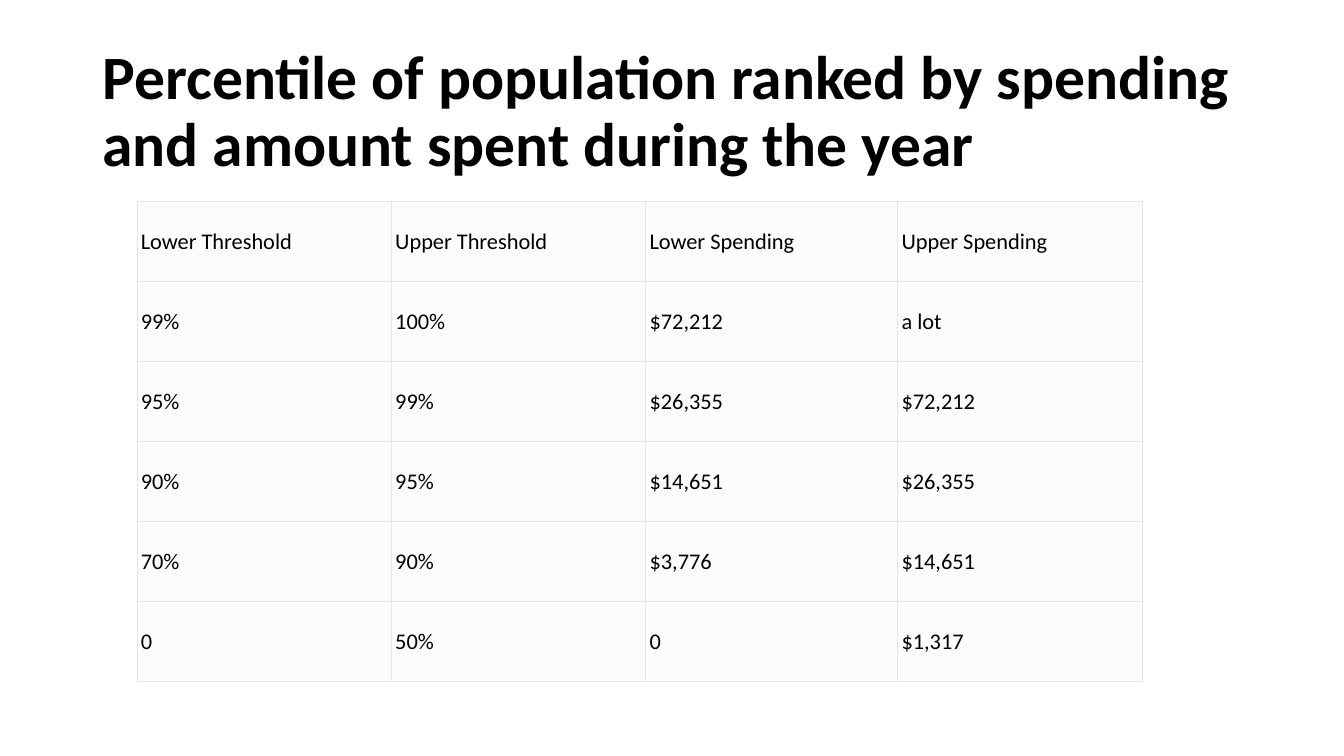
from dataclasses import dataclass

from lxml.etree import SubElement
from pptx import Presentation
from pptx.dml.color import RGBColor
from pptx.enum.text import MSO_ANCHOR, PP_ALIGN
from pptx.oxml.ns import qn
from pptx.shapes.autoshape import Shape
from pptx.slide import Slide
from pptx.table import _Cell
from pptx.text.text import _Paragraph
from pptx.util import Cm, Pt


@dataclass(frozen=True)
class Theme:
    font: str = "Calibri"
    ink: str = "000000"
    fill: str = "FCFCFC"
    line: str = "E6E6E6"
    rule: float = 0.6
    title: int = 44
    body: int = 16


@dataclass(frozen=True)
class Column:
    head: str
    width: float
    values: tuple[str, ...]


THEME = Theme()
TITLE = "Percentile of population ranked by spending and amount spent during the year"
COLUMNS = (
    Column("Lower Threshold", 6.41, ("99%", "95%", "90%", "70%", "0")),
    Column("Upper Threshold", 6.41, ("100%", "99%", "95%", "90%", "50%")),
    Column("Lower Spending", 6.35, ("$72,212", "$26,355", "$14,651", "$3,776", "0")),
    Column("Upper Spending", 6.18, ("a lot", "$72,212", "$26,355", "$14,651", "$1,317")),
)


def style(para: _Paragraph, size: int, bold: bool = False) -> None:
    para.alignment = PP_ALIGN.LEFT
    para.font.name = THEME.font
    para.font.size = Pt(size)
    para.font.bold = bold
    para.font.color.rgb = RGBColor.from_string(THEME.ink)


def draw_title(title: Shape) -> None:
    title.left, title.top = Cm(2.33), Cm(1.01)
    title.width, title.height = Cm(29.21), Cm(3.68)
    frame = title.text_frame
    frame.text = TITLE
    frame.word_wrap = True
    frame.vertical_anchor = MSO_ANCHOR.MIDDLE
    para = frame.paragraphs[0]
    para.line_spacing = 0.9
    style(para, THEME.title, bold=True)


def draw_cell(cell: _Cell, text: str) -> None:
    cell.text = text
    cell.vertical_anchor = MSO_ANCHOR.MIDDLE
    cell.margin_left = cell.margin_right = Cm(0.1)
    cell.margin_top = cell.margin_bottom = Cm(0.02)
    style(cell.text_frame.paragraphs[0], THEME.body)
    props = cell._tc.get_or_add_tcPr()
    for side in ("a:lnL", "a:lnR", "a:lnT", "a:lnB"):
        edge = SubElement(props, qn(side), w=str(Pt(THEME.rule)))
        SubElement(SubElement(edge, qn("a:solidFill")), qn("a:srgbClr"), val=THEME.line)
    cell.fill.solid()
    cell.fill.fore_color.rgb = RGBColor.from_string(THEME.fill)


def draw_table(slide: Slide) -> None:
    count = len(COLUMNS[0].values) + 1
    width = sum(Cm(col.width) for col in COLUMNS)
    frame = slide.shapes.add_table(
        count, len(COLUMNS), Cm(3.45), Cm(5.08), width, Cm(12.1)
    )
    table = frame.table
    table.first_row = table.horz_banding = False
    for x, col in enumerate(COLUMNS):
        table.columns[x].width = Cm(col.width)
        for y, text in enumerate((col.head, *col.values)):
            draw_cell(table.cell(y, x), text)


def main() -> None:
    deck = Presentation()
    deck.slide_width, deck.slide_height = Cm(33.87), Cm(19.05)
    slide = deck.slides.add_slide(deck.slide_layouts[5])
    draw_title(slide.shapes.title)
    draw_table(slide)
    deck.save("out.pptx")


if __name__ == "__main__":
    main()
